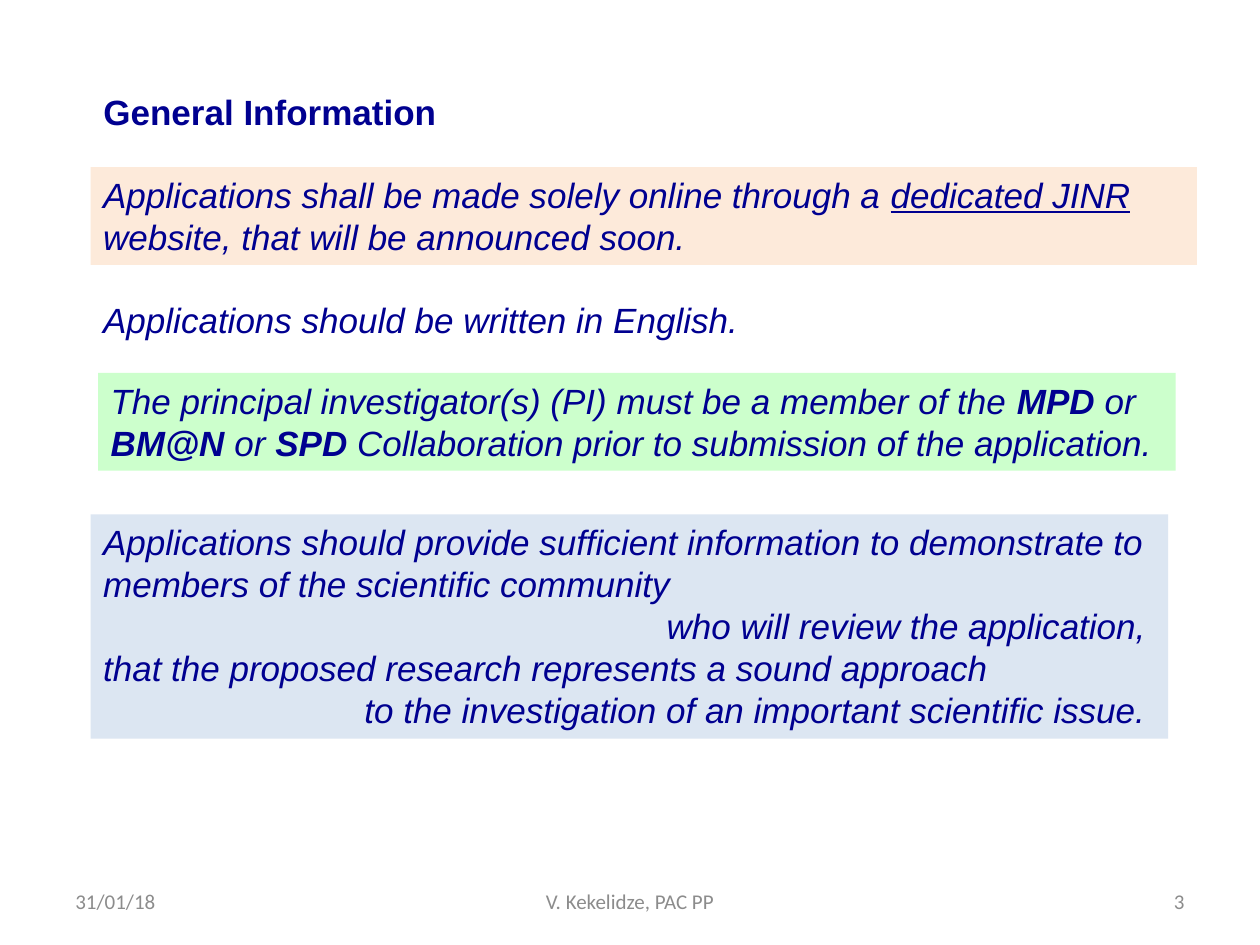
"""Build the general information slide of a call for applications."""
from pptx import Presentation, util as u
from pptx.dml.color import RGBColor
from pptx.enum import shapes, text

NAVY = RGBColor(0x00, 0x00, 0x90)
GREY = RGBColor(0x8C, 0x8C, 0x8C)
PEACH = RGBColor(0xFD, 0xEA, 0xDA)
GREEN = RGBColor(0xCC, 0xFF, 0xCC)
BLUE = RGBColor(0xDC, 0xE6, 0xF2)

LEFT, CENTER, RIGHT = text.PP_ALIGN.LEFT, text.PP_ALIGN.CENTER, text.PP_ALIGN.RIGHT
TOP, MIDDLE = text.MSO_ANCHOR.TOP, text.MSO_ANCHOR.MIDDLE
BOLD = {"bold": True}
UNDER = {"underline": True}


class Page:
    head = {"name": "Arial", "size": u.Pt(20), "bold": True}
    body = {"name": "Arial", "size": u.Pt(20), "italic": True}
    foot = {"name": "Calibri", "size": u.Pt(12)}

    def __init__(self, deck):
        self.slide = deck.slides.add_slide(deck.slide_layouts[5])

    def fill_text(self, shape, paras, style, color=NAVY, anchor=TOP, wrap=True):
        frame = shape.text_frame
        form = {"word_wrap": wrap, "vertical_anchor": anchor,
                "auto_size": text.MSO_AUTO_SIZE.NONE}
        for key, val in form.items():
            setattr(frame, key, val)
        for i, (align, runs) in enumerate(paras):
            para = frame.add_paragraph() if i else frame.paragraphs[0]
            para.alignment = align
            for words, extra in runs:
                run = para.add_run()
                run.text = words
                for key, val in {**style, **extra}.items():
                    setattr(run.font, key, val)
                run.font.color.rgb = color

    def title(self, box, words):
        shape = self.slide.shapes.title
        for key, val in zip(("left", "top", "width", "height"), box):
            setattr(shape, key, u.Cm(val))
        self.fill_text(shape, [(LEFT, [(words, {})])], self.head)

    def label(self, box, words, style, align=LEFT, **form):
        shape = self.slide.shapes.add_textbox(*map(u.Cm, box))
        self.fill_text(shape, [(align, [(words, {})])], style, **form)

    def panel(self, box, fill, paras):
        shape = self.slide.shapes.add_shape(
            shapes.MSO_SHAPE.RECTANGLE, *map(u.Cm, box))
        shape.shadow.inherit = False
        shape.fill.solid()
        shape.fill.fore_color.rgb = fill
        shape.line.fill.background()
        self.fill_text(shape, paras, self.body)


def main():
    deck = Presentation()
    deck.slide_width, deck.slide_height = u.Cm(25.4), u.Cm(19.05)
    page = Page(deck)
    page.title((1.83, 1.7, 21.72, 1.11), "General Information")

    page.panel((1.83, 3.37, 22.3, 1.97), PEACH, [(LEFT, [
        ("Applications shall be made solely online through a ", {}),
        ("dedicated JINR", UNDER),
        (" website, that will be announced soon.", {})])])
    page.label((1.83, 5.9, 13.6, 1.11),
               "Applications should be written in English.",
               page.body, wrap=False)
    page.panel((1.98, 7.52, 21.72, 1.97), GREEN, [(LEFT, [
        ("The principal investigator(s) (PI) must be a member of the", {}),
        (" MPD ", BOLD), ("or ", {}), ("BM@N ", BOLD), ("or ", {}),
        ("SPD", BOLD),
        (" Collaboration prior to submission of the application.", {})])])
    page.panel((1.83, 10.37, 21.72, 4.52), BLUE, [
        (LEFT, [("Applications should provide sufficient information to "
                 "demonstrate to members of the scientific community", {})]),
        (RIGHT, [("who will review the application, ", {})]),
        (LEFT, [("that the proposed research represents a sound approach", {})]),
        (RIGHT, [("to the investigation of an important scientific issue. ", {})])])

    for left, width, words, align in (
            (1.27, 5.93, "31/01/18", LEFT),
            (8.68, 8.04, "V. Kekelidze, PAC PP", CENTER),
            (18.2, 5.93, "3", RIGHT)):
        page.label((left, 17.66, width, 1.01), words, page.foot, align,
                   color=GREY, anchor=MIDDLE)
    deck.save("out.pptx")


if __name__ == "__main__":
    main()
